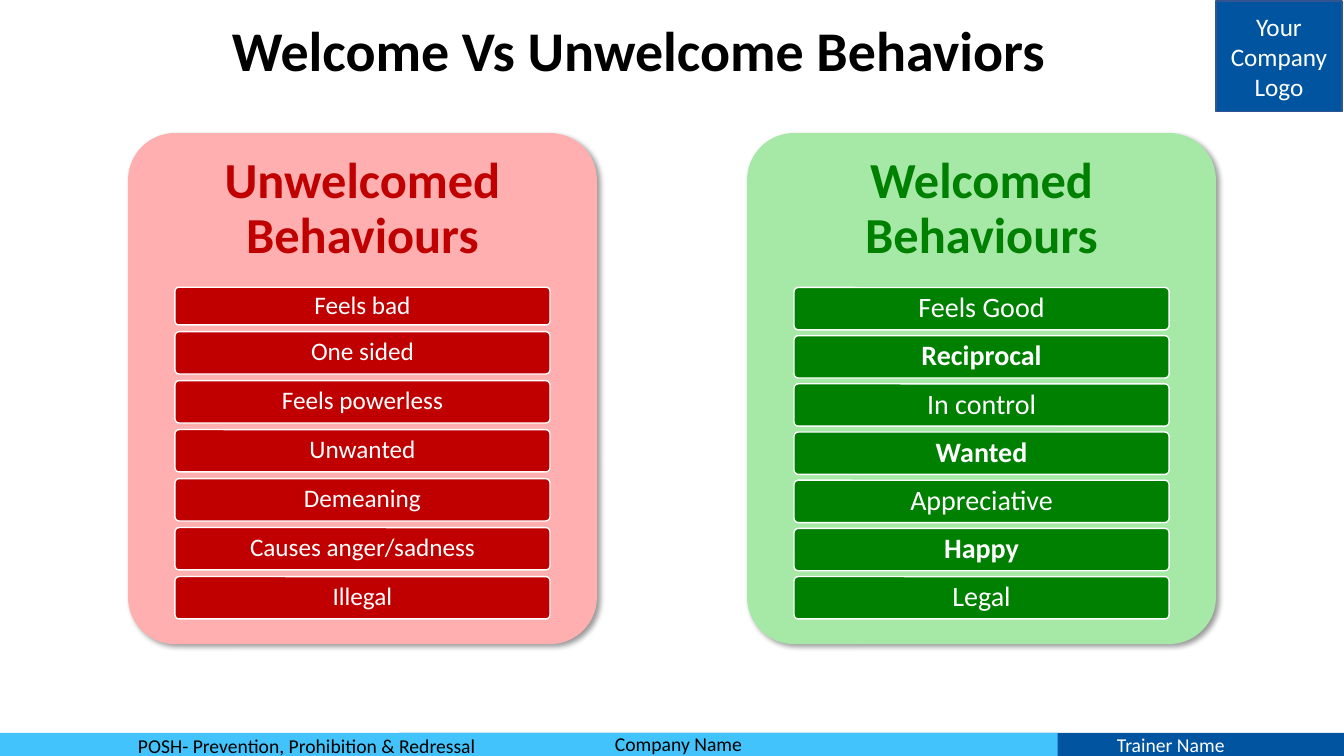
from lxml import etree
from pptx import Presentation
from pptx.dml.color import RGBColor
from pptx.enum.shapes import MSO_SHAPE
from pptx.enum.text import MSO_ANCHOR, PP_ALIGN
from pptx.oxml.ns import qn
from pptx.util import Inches, Pt

RECT, ROUND = MSO_SHAPE.RECTANGLE, MSO_SHAPE.ROUNDED_RECTANGLE
TOP, MIDDLE = MSO_ANCHOR.TOP, MSO_ANCHOR.MIDDLE
LEFT, CENTER = PP_ALIGN.LEFT, PP_ALIGN.CENTER

FONT = "Calibri"
COLORS = {
    "black": "000000", "white": "FFFFFF", "navy": "01549F", "edge": "325491",
    "sky": "42C3FB", "red": "C00000", "pink": "FFAFAF",
    "green": "008000", "mint": "A6E8A6",
}
TITLE = "Welcome Vs Unwelcome Behaviors"
LOGO = ["Your", "Company", "Logo"]
BANDS = [((3.96, 7.27, 9.38, 0.23), "navy"), ((0, 7.27, 10.49, 0.24), "sky")]
FOOTER = [
    ("POSH- Prevention, Prohibition & Redressal", (1.27, 7.23, 3.86, 0.34), "black"),
    ("Company Name", (6.0, 7.21, 2.42, 0.34), "black"),
    ("Trainer Name", (10.98, 7.22, 2.3, 0.34), "white"),
]
CARDS = [
    {"head": "Unwelcomed Behaviours", "left": 1.27, "fill": "pink", "main": "red",
     "size": 18, "second": 3.29, "bold": (),
     "rows": ["Feels bad", "One sided", "Feels powerless", "Unwanted",
              "Demeaning", "Causes anger/sadness", "Illegal"]},
    {"head": "Welcomed Behaviours", "left": 7.41, "fill": "mint", "main": "green",
     "size": 20, "second": 3.33, "bold": ("Reciprocal", "Wanted", "Happy"),
     "rows": ["Feels Good", "Reciprocal", "In control", "Wanted",
              "Appreciative", "Happy", "Legal"]},
]
CARD_TOP, CARD_W, CARD_H, HEAD_H = 1.32, 4.65, 5.07, 1.52
ROW_W, ROW_H, FIRST, LAST = 3.72, 0.42, 2.85, 5.72


def rgb(name):
    return RGBColor.from_string(COLORS[name])


def write(shape, lines, size, color, bold=False, align=CENTER, anchor=MIDDLE,
          pad=(0.1, 0.05), spacing=1.0):
    frame = shape.text_frame
    frame.word_wrap = True
    frame.vertical_anchor = anchor
    frame.margin_left = frame.margin_right = Inches(pad[0])
    frame.margin_top = frame.margin_bottom = Inches(pad[1])
    for i, line in enumerate(lines):
        para = frame.add_paragraph() if i else frame.paragraphs[0]
        para.alignment = align
        para.line_spacing = spacing
        para.space_before = Pt(0)
        run = para.add_run()
        run.text = line
        run.font.name = FONT
        run.font.size = Pt(size)
        run.font.bold = bold
        run.font.color.rgb = rgb(color)


def add_box(slide, kind, at, fill, line=None):
    box = slide.shapes.add_shape(kind, *map(Inches, at))
    box.shadow.inherit = False
    box.fill.solid()
    box.fill.fore_color.rgb = rgb(fill)
    if line:
        box.line.color.rgb = rgb(line)
        box.line.width = Pt(1)
    else:
        box.line.fill.background()
    if kind == ROUND:
        box.adjustments[0] = 0.1
    return box


def add_text(slide, at, *args, **style):
    write(slide.shapes.add_textbox(*map(Inches, at)), *args, **style)


def cast_shadow(shape):
    effects = shape.element.spPr.find(qn("a:effectLst"))
    outer = etree.SubElement(
        effects, qn("a:outerShdw"), blurRad=str(Pt(4)), dist=str(Pt(3)),
        dir=str(45 * 60000), algn="tl", rotWithShape="0")
    tint = etree.SubElement(outer, qn("a:srgbClr"), val=COLORS["black"])
    etree.SubElement(tint, qn("a:alpha"), val="40000")


def add_card(slide, card):
    left = card["left"]
    panel = add_box(slide, ROUND, (left, CARD_TOP, CARD_W, CARD_H), card["fill"])
    cast_shadow(panel)
    add_text(slide, (left, CARD_TOP, CARD_W, HEAD_H), [card["head"]], 36,
             card["main"], bold=True, pad=(0.15, 0.15), spacing=0.9)
    rows = card["rows"]
    step = (LAST - card["second"]) / (len(rows) - 2)
    inset = (CARD_W - ROW_W) / 2
    for i, label in enumerate(rows):
        base = LAST + ROW_H - step * (len(rows) - 1 - i)
        top = max(FIRST, base - ROW_H)
        bar = add_box(slide, ROUND, (left + inset, top, ROW_W, base - top),
                      card["main"], "white")
        write(bar, [label], card["size"], "white", bold=label in card["bold"],
              pad=(0.06, 0.04), spacing=0.9)


def main():
    deck = Presentation()
    deck.slide_width, deck.slide_height = Inches(13.33), Inches(7.5)
    slide = deck.slides.add_slide(deck.slide_layouts[5])

    for at, fill in BANDS:
        add_box(slide, RECT, at, fill)
    for label, at, color in FOOTER:
        add_text(slide, at, [label], 14, color, align=LEFT, anchor=TOP)
    logo = add_box(slide, RECT, (12.06, 0.01, 1.25, 1.1), "navy", "edge")
    write(logo, LOGO, 18, "white")

    title = slide.shapes.title
    title.left, title.top = Inches(2.2), Inches(0.1)
    title.width, title.height = Inches(8.92), Inches(0.77)
    write(title, [TITLE], 40, "black", bold=True, align=LEFT, anchor=TOP)

    for card in CARDS:
        add_card(slide, card)
    deck.save("out.pptx")


if __name__ == "__main__":
    main()
